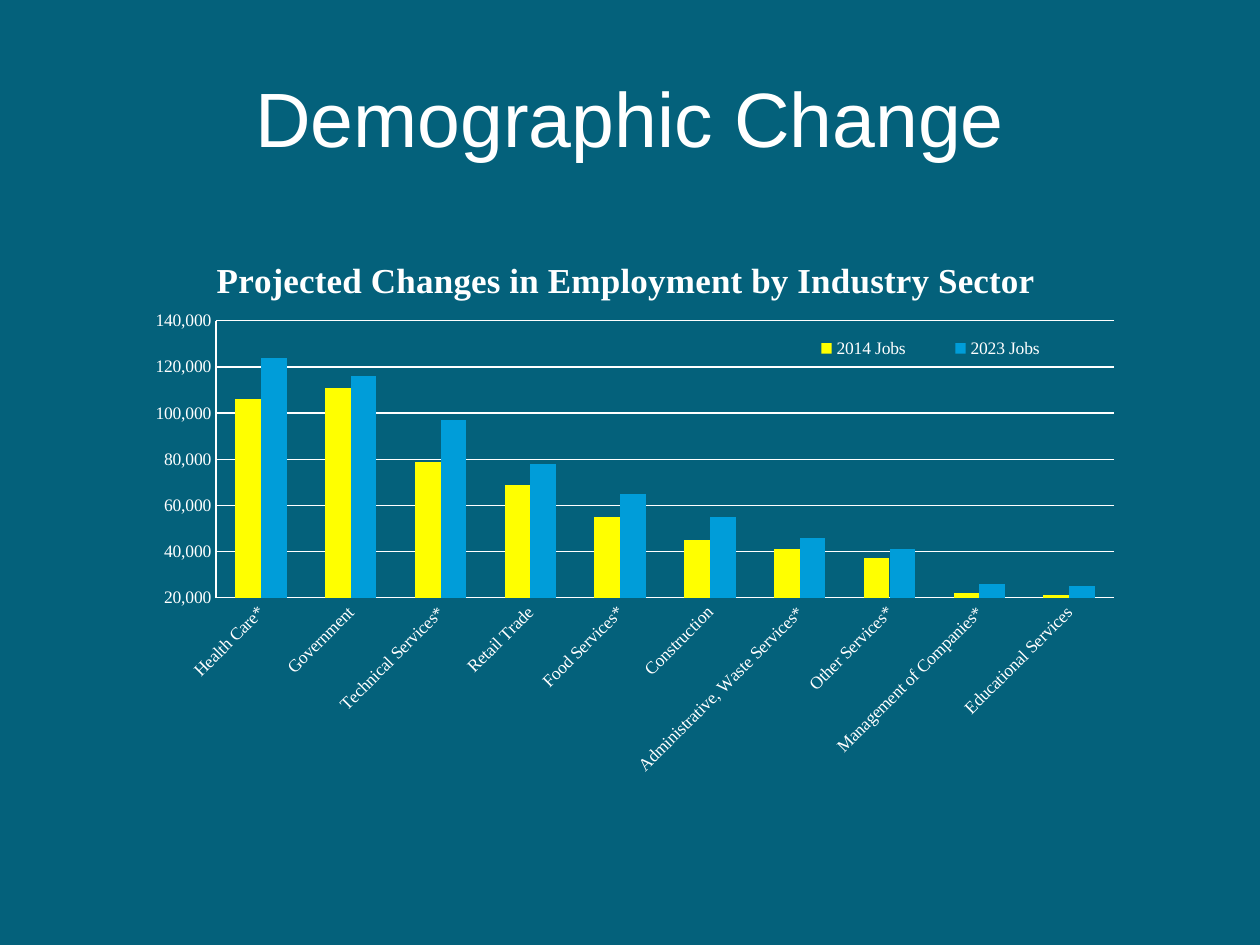
"""Build the Demographic Change slide with its employment column chart."""
from lxml import etree
from pptx import Presentation
from pptx.chart.data import CategoryChartData
from pptx.dml.color import RGBColor
from pptx.enum.chart import XL_CHART_TYPE, XL_LEGEND_POSITION, XL_TICK_MARK
from pptx.enum.text import MSO_ANCHOR, PP_ALIGN
from pptx.oxml.ns import qn
from pptx.util import Inches, Pt

COLUMNS = XL_CHART_TYPE.COLUMN_CLUSTERED
LEGEND_RIGHT = XL_LEGEND_POSITION.RIGHT
NO_TICKS = XL_TICK_MARK.NONE
MIDDLE = MSO_ANCHOR.MIDDLE
CENTER = PP_ALIGN.CENTER
WHITE = "FFFFFF"
NUMBER_FORMAT = r"#,##0;[Red]\ \(#,##0\)"

JOBS = [
    ("Health Care*", 106000, 124000),
    ("Government", 111000, 116000),
    ("Technical Services*", 79000, 97000),
    ("Retail Trade", 69000, 78000),
    ("Food Services*", 55000, 65000),
    ("Construction", 45000, 55000),
    ("Administrative, Waste Services*", 41000, 46000),
    ("Other Services*", 37000, 41000),
    ("Management of Companies*", 22000, 26000),
    ("Educational Services", 21000, 25000),
]


def style_font(font, name, size, color=WHITE, bold=False):
    font.name = name
    font.size = Pt(size)
    font.bold = bold
    font.color.rgb = RGBColor.from_string(color)


def place(element, index, **settings):
    layout = element.find(qn("c:layout"))
    if layout is None:
        layout = etree.Element(qn("c:layout"))
        element.insert(index, layout)
    manual = etree.SubElement(layout, qn("c:manualLayout"))
    for tag, value in settings.items():
        etree.SubElement(manual, qn(f"c:{tag}")).set("val", str(value))


deck = Presentation()
deck.slide_width = Inches(10)
deck.slide_height = Inches(7.5)
slide = deck.slides.add_slide(deck.slide_layouts[6])
slide.background.fill.solid()
slide.background.fill.fore_color.rgb = RGBColor.from_string("04617B")

title_box = slide.shapes.add_textbox(Inches(0.5), Inches(0.3), Inches(9), Inches(1.25))
title_box.text_frame.word_wrap = True
title_box.text_frame.vertical_anchor = MIDDLE
title_para = title_box.text_frame.paragraphs[0]
title_para.text = "Demographic Change"
title_para.alignment = CENTER
style_font(title_para.font, "Arial", 44)

chart_data = CategoryChartData(number_format="#,##0")
sectors, jobs_2014, jobs_2023 = zip(*JOBS)
chart_data.categories = sectors
chart_data.add_series("2014 Jobs", jobs_2014)
chart_data.add_series("2023 Jobs", jobs_2023)
chart = slide.shapes.add_chart(
    COLUMNS, Inches(0.5), Inches(1.75), Inches(9), Inches(4.95), chart_data
).chart
style_font(chart.font, "Times New Roman", 10)

chart.has_title = True
heading = chart.chart_title.text_frame.paragraphs[0]
heading.text = "Projected Changes in Employment by Industry Sector"
style_font(heading.font, "Times New Roman", 20, bold=True)
place(chart.chart_title._element, 1, xMode="edge", yMode="edge", x=0.13, y=0.05)

chart.has_legend = True
chart.legend.position = LEGEND_RIGHT
chart.legend.include_in_layout = False
style_font(chart.legend.font, "Times New Roman", 10)
place(chart.legend._element, 1, xMode="edge", yMode="edge", x=0.63, y=0.18, w=0.27, h=0.05)

plot = chart.plots[0]
plot.gap_width = 150
plot.overlap = 0
plot.vary_by_categories = False
for series, color in zip(plot.series, ("FFFF00", "009DD9")):
    series.format.fill.solid()
    series.format.fill.fore_color.rgb = RGBColor.from_string(color)
place(chart._chartSpace.chart.plotArea, 0, layoutTarget="inner", xMode="edge",
      yMode="edge", x=0.135, y=0.161, w=0.792, h=0.444)

value_axis = chart.value_axis
value_axis.minimum_scale = 20000
value_axis.maximum_scale = 140000
value_axis.major_unit = 20000
value_axis.has_major_gridlines = True
value_axis.tick_labels.number_format = NUMBER_FORMAT
value_axis.tick_labels.number_format_is_linked = False
for axis in (chart.category_axis, value_axis):
    axis.major_tick_mark = NO_TICKS
    axis.minor_tick_mark = NO_TICKS
    style_font(axis.tick_labels.font, "Times New Roman", 10)
for part in (chart.category_axis, value_axis, value_axis.major_gridlines):
    part.format.line.color.rgb = RGBColor.from_string(WHITE)
    part.format.line.width = Pt(0.75)
label_body = chart.category_axis._element.find(f"{qn('c:txPr')}/{qn('a:bodyPr')}")
label_body.set("rot", "-2700000")
label_body.set("vert", "horz")

deck.save("out.pptx")
